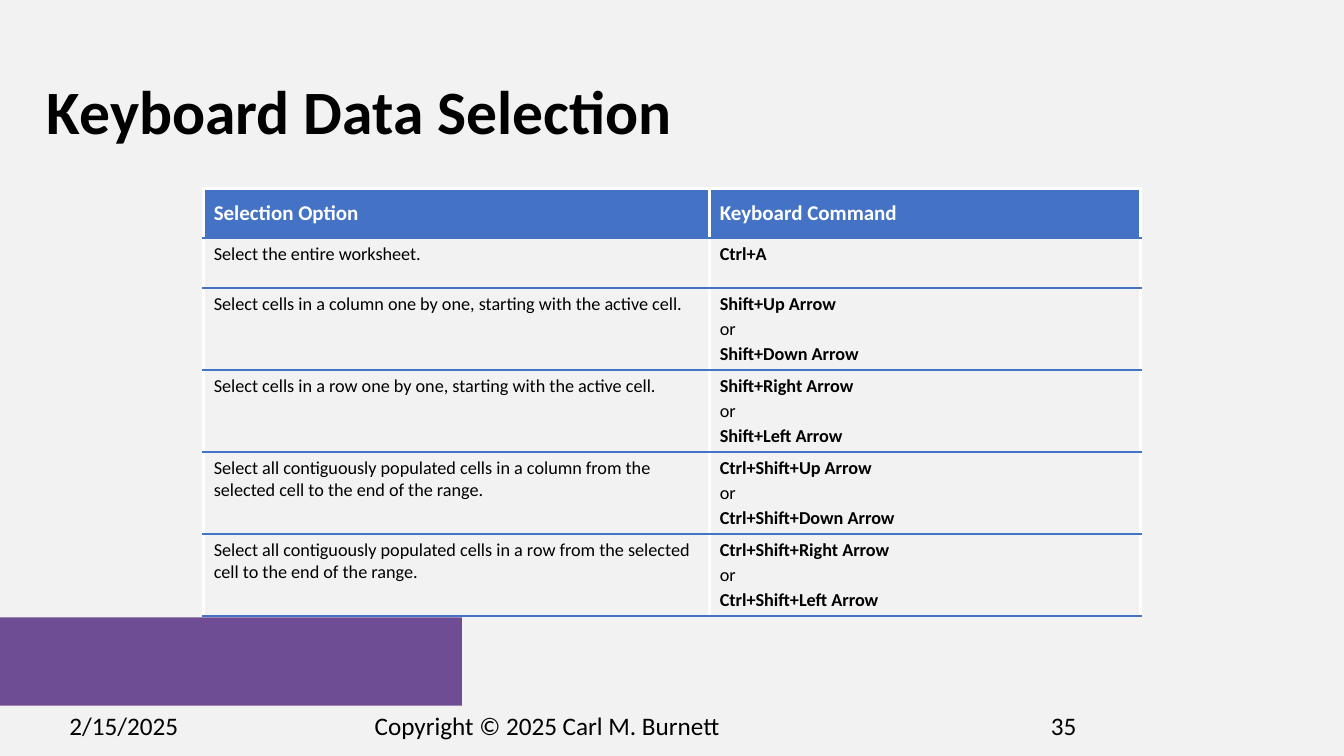
from lxml.etree import SubElement
from pptx import Presentation
from pptx.dml.color import RGBColor
from pptx.enum.shapes import MSO_SHAPE as Shape
from pptx.enum.text import MSO_ANCHOR as Anchor
from pptx.oxml.ns import qn
from pptx.util import Pt

BLACK, WHITE, BLUE, GREY, PURPLE = "000000", "FFFFFF", "4472C4", "F2F2F2", "6E4D94"


def color(value):
    return RGBColor.from_string(value)


def write(frame, text, size=18, bold=False, ink=BLACK, before=0, spacing=None):
    frame.word_wrap = True
    para = frame.paragraphs[0] if not frame.text else frame.add_paragraph()
    if before:
        para.space_before = Pt(before)
    if spacing:
        para.line_spacing = spacing
    span = para.add_run()
    span.text = text
    span.font.name = "Calibri"
    span.font.size = Pt(size)
    span.font.bold = bold
    span.font.color.rgb = color(ink)


deck = Presentation()
deck.slide_width, deck.slide_height = Pt(960), Pt(540)
page = deck.slides.add_slide(deck.slide_layouts[6])
page.background.fill.solid()
page.background.fill.fore_color.rgb = color(GREY)

band = page.shapes.add_shape(Shape.RECTANGLE, Pt(0), Pt(441), Pt(330), Pt(63))
band.shadow.inherit = False
band.fill.solid()
band.fill.fore_color.rgb = color(PURPLE)
band.line.fill.background()

title = page.shapes.add_textbox(Pt(26.5), Pt(55.5), Pt(806), Pt(52))
title.text_frame.vertical_anchor = Anchor.MIDDLE
write(title.text_frame, "Keyboard Data Selection", size=44, bold=True, spacing=0.9)

footers = [
    ("2/15/2025", 42.5, 173.5),
    ("Copyright © 2025 Carl M. Burnett", 260.5, 439),
    ("35", 743.5, 173.5),
]
for text, left, width in footers:
    box = page.shapes.add_textbox(Pt(left), Pt(504), Pt(width), Pt(29))
    write(box.text_frame, text)

rows = [
    ("Selection Option", ["Keyboard Command"]),
    ("Select the entire worksheet.", ["Ctrl+A"]),
    ("Select cells in a column one by one, starting with the active cell.",
     ["Shift+Up Arrow", "or", "Shift+Down Arrow"]),
    ("Select cells in a row one by one, starting with the active cell.",
     ["Shift+Right Arrow", "or", "Shift+Left Arrow"]),
    ("Select all contiguously populated cells in a column from the selected cell to the end of the range.",
     ["Ctrl+Shift+Up Arrow", "or", "Ctrl+Shift+Down Arrow"]),
    ("Select all contiguously populated cells in a row from the selected cell to the end of the range.",
     ["Ctrl+Shift+Right Arrow", "or", "Ctrl+Shift+Left Arrow"]),
]
heights = [35.5, 35.5] + [58.6] * 4
table = page.shapes.add_table(
    len(rows), 2, Pt(145.5), Pt(134.6), Pt(669), Pt(sum(heights))).table
table.horz_banding = False
for column, width in zip(table.columns, (361.5, 307.5)):
    column.width = Pt(width)

for index, (option, commands) in enumerate(rows):
    header = index == 0
    table.rows[index].height = Pt(heights[index])
    for cell, lines in zip(table.rows[index].cells, ([option], commands)):
        cell.vertical_anchor = Anchor.MIDDLE if header else Anchor.TOP
        for number, line in enumerate(lines):
            bold = header or (lines is commands and line != "or")
            write(cell.text_frame, line, size=15 if header else 13, bold=bold,
                  ink=WHITE if header else BLACK, before=2 if number else 0)

        properties = cell._tc.get_or_add_tcPr()
        top = (WHITE, 2.25) if header else (BLUE, 1.5)
        borders = {"a:lnL": (WHITE, 2.25), "a:lnR": (WHITE, 2.25),
                   "a:lnT": top, "a:lnB": (BLUE, 1.5)}
        for side, (ink, weight) in borders.items():
            border = SubElement(properties, qn(side), w=str(Pt(weight)))
            SubElement(SubElement(border, qn("a:solidFill")), qn("a:srgbClr"), val=ink)
        cell.fill.solid()
        cell.fill.fore_color.rgb = color(BLUE if header else GREY)

deck.save("out.pptx")
